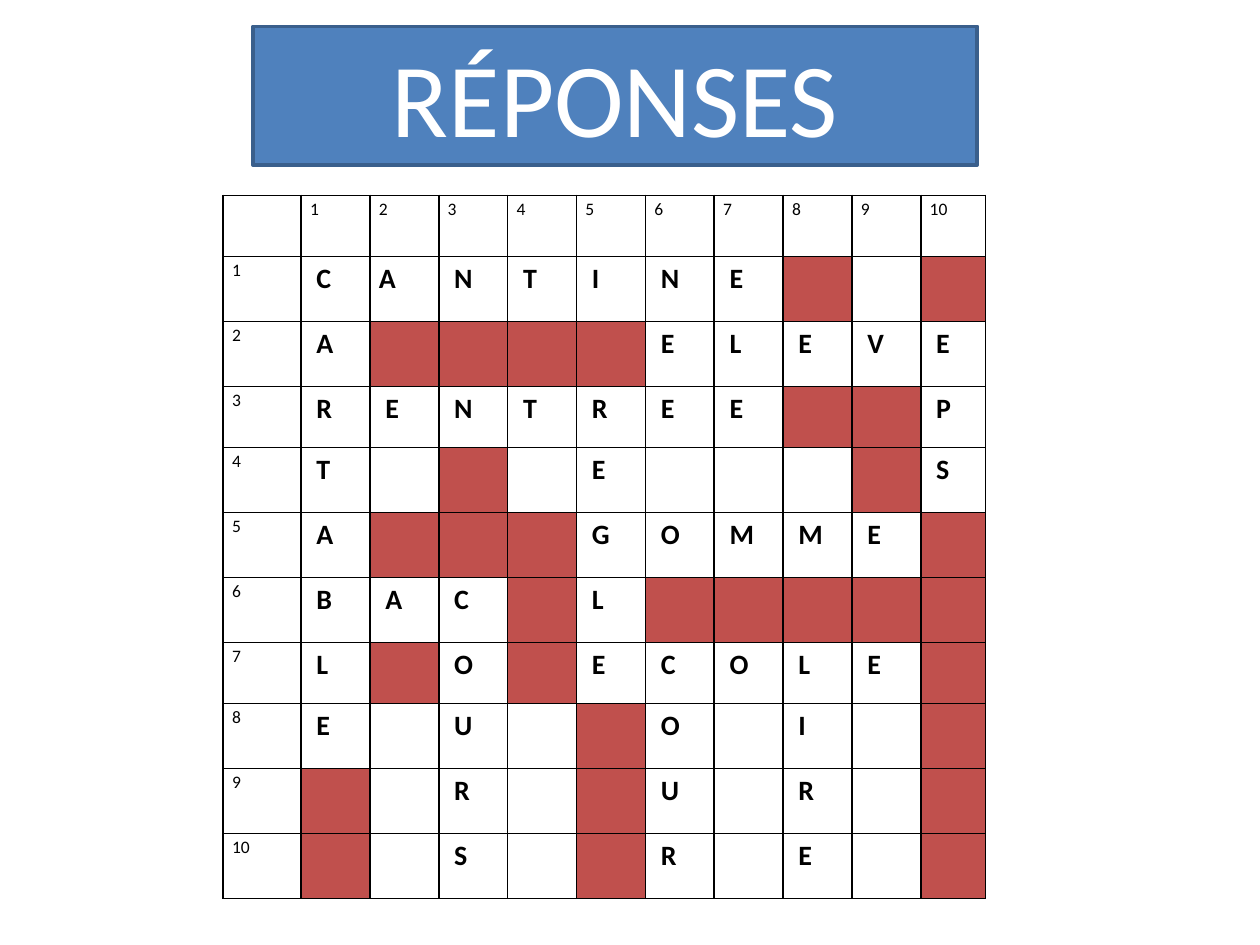
from lxml import etree
from pptx import Presentation
from pptx.dml.color import RGBColor
from pptx.enum import text
from pptx.oxml import ns
from pptx.util import Cm, Pt

BLUE = RGBColor(0x4F, 0x81, 0xBD)
NAVY = RGBColor(0x3A, 0x5F, 0x8C)
RED = RGBColor(0xC0, 0x50, 0x4D)
WHITE = RGBColor(0xFF, 0xFF, 0xFF)
BLACK = RGBColor(0, 0, 0)

HEAD = {"name": "Calibri", "size": Pt(60), "bold": False}
CLUE = {"name": "Calibri", "size": Pt(10), "bold": False}
MARK = {"name": "Calibri", "size": Pt(16), "bold": True}

# "#" is a filled square, "." an empty one
GRID = [
    "CANTINE#.#",
    "A####ELEVE",
    "RENTREE##P",
    "T.#.E...#S",
    "A###GOMME#",
    "BAC#L#####",
    "L#O#ECOLE#",
    "E.U.#O.I.#",
    "#.R.#U.R.#",
    "#.S.#R.E.#",
]
SHORT = (0, 3, 7)  # rows slightly lower than the rest


def style(font, look, color):
    for key, value in look.items():
        setattr(font, key, value)
    font.color.rgb = color


def write(cell, words, look, left):
    cell.margin_left = left
    par = cell.text_frame.paragraphs[0]
    par.line_spacing = 1.15
    run = par.add_run()
    run.text = words
    style(run.font, look, BLACK)


def frame(cell):
    """Draw a thin black border on all four sides."""
    props = cell._tc.get_or_add_tcPr()
    for spot, side in enumerate(("lnL", "lnR", "lnT", "lnB")):
        line = etree.Element(ns.qn("a:" + side), w=str(Pt(1)))
        fill = etree.SubElement(line, ns.qn("a:solidFill"))
        etree.SubElement(fill, ns.qn("a:srgbClr"), val=str(BLACK))
        props.insert(spot, line)


def banner(slide, left, top, width, height):
    title = slide.shapes.title
    box = {"left": left, "top": top, "width": width, "height": height}
    for key, value in box.items():
        setattr(title, key, value)
    title.fill.solid()
    title.fill.fore_color.rgb = BLUE
    title.line.color.rgb = NAVY
    title.line.width = Pt(2)
    body = title.text_frame
    body.text = "RÉPONSES"
    body.auto_size = text.MSO_AUTO_SIZE.NONE
    body.vertical_anchor = text.MSO_ANCHOR.MIDDLE
    par = body.paragraphs[0]
    par.alignment = text.PP_ALIGN.CENTER
    style(par.runs[0].font, HEAD, WHITE)


def puzzle(slide, left, top, width, height):
    """Place the crossword with its row and column numbers."""
    size = len(GRID) + 1
    table = slide.shapes.add_table(size, size, left, top, width, height).table
    table.first_row = table.horz_banding = False

    first, last, low = Cm(1.57), Cm(1.3), Cm(1.23)
    mid = (width - first - last) // (size - 2)
    tall = (height - low * len(SHORT)) // (size - len(SHORT))
    for col, item in enumerate(table.columns):
        item.width = {0: first, size - 1: last}.get(col, mid)
    for row, item in enumerate(table.rows):
        item.height = low if row in SHORT else tall

    for row in range(size):
        for col in range(size):
            cell = table.cell(row, col)
            cell.margin_right = Cm(0.18)
            cell.margin_top = cell.margin_bottom = 0
            mark = GRID[row - 1][col - 1] if row and col else "."
            if mark == "#":
                cell.fill.solid()
                cell.fill.fore_color.rgb = RED
            else:
                cell.fill.background()
            frame(cell)
            if row + col and not row * col:
                write(cell, str(row + col), CLUE, Cm(0.18))
            elif mark not in "#.":
                near = (row, col) == (1, 2)
                write(cell, mark, MARK, Cm(0.18 if near else 0.31))


def main():
    deck = Presentation()
    deck.slide_width, deck.slide_height = Cm(25.4), Cm(19.05)
    slide = deck.slides.add_slide(deck.slide_layouts[5])
    puzzle(slide, Cm(4.5), Cm(3.94), Cm(15.37), Cm(14.17))
    banner(slide, Cm(5.1), Cm(0.53), Cm(14.6), Cm(2.8))
    deck.save("out.pptx")


if __name__ == "__main__":
    main()
